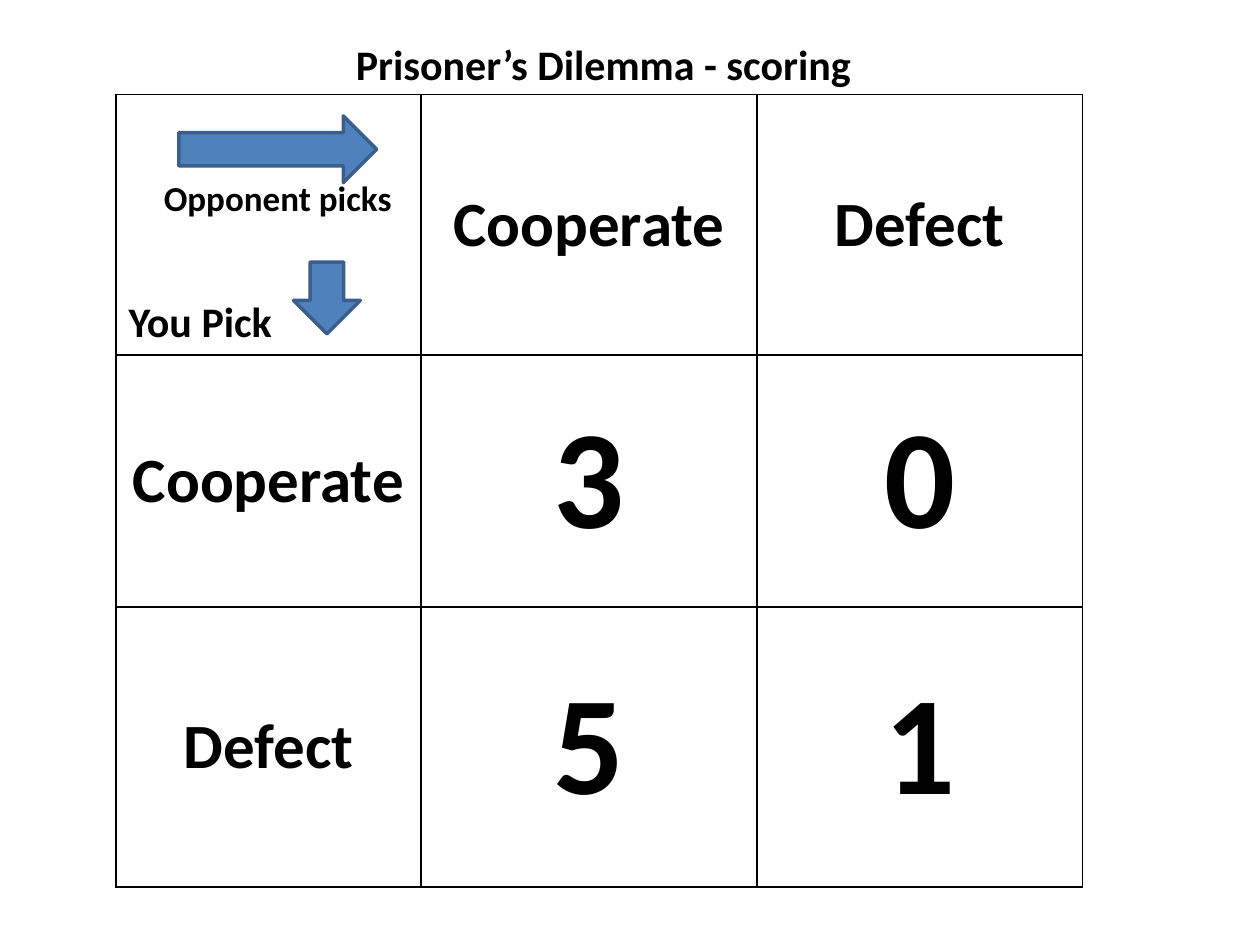
"""Build the Prisoner's Dilemma scoring slide."""
from lxml.etree import SubElement
from pptx import Presentation
from pptx.dml.color import RGBColor
from pptx.enum.shapes import MSO_SHAPE
from pptx.enum.text import MSO_ANCHOR, PP_ALIGN
from pptx.oxml.ns import qn
from pptx.util import Inches, Pt

COLORS = {"ink": "000000", "paper": "FFFFFF", "arrow": "4F81BD", "edge": "3A5F8C"}
COLUMN_WIDTHS = (2.42, 2.67, 2.58)
ROW_HEIGHTS = (2.06, 2, 2.22)
CHOICES = ("Cooperate", "Defect")
SCORES = ((3, 0), (5, 1))


def color(name):
    """Return the named colour."""
    return RGBColor.from_string(COLORS[name])


def write(para, text, size, align=PP_ALIGN.CENTER, before=0, indent=0):
    """Write bold text into a paragraph."""
    para.alignment = align
    para.space_before = Pt(before)
    if indent:
        para._p.get_or_add_pPr().set("marL", str(Inches(indent)))
    span = para.add_run()
    span.text = text
    span.font.name = "Calibri"
    span.font.size = Pt(size)
    span.font.bold = True
    span.font.color.rgb = color("ink")


def outline_cell(cell):
    """Give a cell thin borders and a plain fill."""
    properties = cell._tc.get_or_add_tcPr()
    for side in ("a:lnL", "a:lnR", "a:lnT", "a:lnB"):
        line = SubElement(properties, qn(side), w=str(Pt(1)))
        fill = SubElement(line, qn("a:solidFill"))
        SubElement(fill, qn("a:srgbClr"), val=COLORS["ink"])
    cell.fill.solid()
    cell.fill.fore_color.rgb = color("paper")


def add_title(page, left, top, width, height):
    """Place the slide title."""
    box = page.shapes.title
    box.left, box.top = Inches(left), Inches(top)
    box.width, box.height = Inches(width), Inches(height)
    box.text_frame.vertical_anchor = MSO_ANCHOR.MIDDLE
    write(box.text_frame.paragraphs[0], "Prisoner’s Dilemma - scoring", 24)


def fill_corner(cell):
    """Write the axis labels in the corner cell."""
    cell.vertical_anchor = MSO_ANCHOR.TOP
    cell.margin_top = Inches(0.66)
    frame = cell.text_frame
    write(frame.paragraphs[0], "Opponent picks", 20, PP_ALIGN.LEFT, indent=0.28)
    write(frame.add_paragraph(), "You Pick", 24, PP_ALIGN.LEFT, before=44)


def add_score_table(page, left, top):
    """Place the table of choices and scores."""
    table = page.shapes.add_table(
        len(ROW_HEIGHTS), len(COLUMN_WIDTHS), Inches(left), Inches(top),
        Inches(sum(COLUMN_WIDTHS)), Inches(sum(ROW_HEIGHTS))).table
    table.horz_banding = False
    for column, width in zip(table.columns, COLUMN_WIDTHS):
        column.width = Inches(width)
    for row, height in zip(table.rows, ROW_HEIGHTS):
        row.height = Inches(height)
    for cell in table.iter_cells():
        outline_cell(cell)
        cell.vertical_anchor = MSO_ANCHOR.MIDDLE
    fill_corner(table.cell(0, 0))
    for i, choice in enumerate(CHOICES, start=1):
        for cell in (table.cell(0, i), table.cell(i, 0)):
            write(cell.text_frame.paragraphs[0], choice, 36)
        for j, score in enumerate(SCORES[i - 1], start=1):
            write(table.cell(i, j).text_frame.paragraphs[0], str(score), 80)


def add_arrow(page, kind, left, top, width, height):
    """Place a block arrow."""
    arrow = page.shapes.add_shape(
        kind, Inches(left), Inches(top), Inches(width), Inches(height))
    arrow.shadow.inherit = False
    arrow.fill.solid()
    arrow.fill.fore_color.rgb = color("arrow")
    arrow.line.color.rgb = color("edge")
    arrow.line.width = Pt(2)


def main():
    """Build and save the deck."""
    deck = Presentation()
    deck.slide_width, deck.slide_height = Inches(10), Inches(7.5)
    page = deck.slides.add_slide(deck.slide_layouts[5])
    add_score_table(page, 0.92, 0.75)
    add_arrow(page, MSO_SHAPE.DOWN_ARROW, 2.33, 2.08, 0.53, 0.57)
    add_arrow(page, MSO_SHAPE.RIGHT_ARROW, 1.42, 0.92, 1.57, 0.53)
    add_title(page, 1, 0.25, 7.58, 0.51)
    deck.save("out.pptx")


if __name__ == "__main__":
    main()
